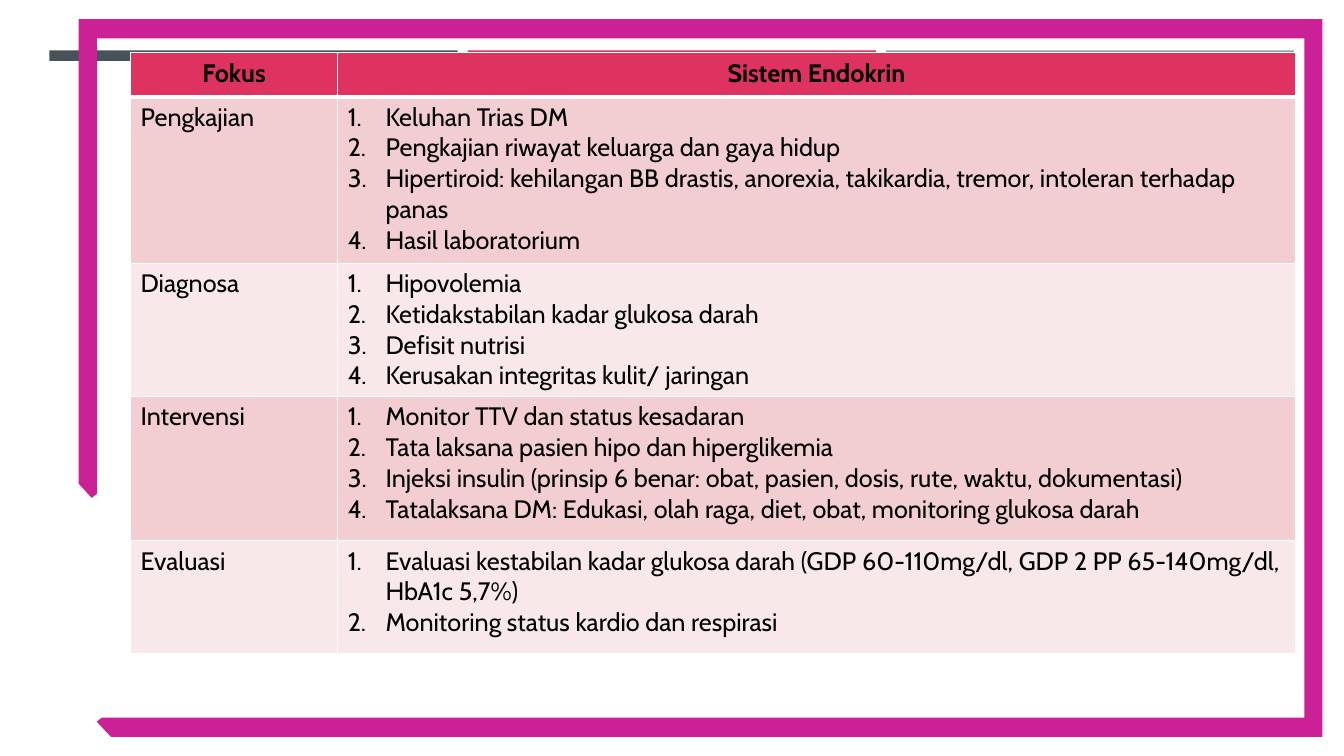
"""Build a slide with a table of nursing focus points for the endocrine system."""
from lxml import etree
from pptx import Presentation
from pptx.dml.color import RGBColor
from pptx.enum.shapes import MSO_SHAPE
from pptx.enum.text import PP_ALIGN
from pptx.oxml.ns import qn
from pptx.util import Pt

RECTANGLE = MSO_SHAPE.RECTANGLE
CENTER = PP_ALIGN.CENTER
INDENT = Pt(27)


def paint(fill, color):
    fill.solid()
    fill.fore_color.rgb = RGBColor.from_string(color)


def add_border(cell, side, width):
    line = etree.SubElement(cell._tc.get_or_add_tcPr(), qn(f"a:ln{side}"), w=str(Pt(width)))
    solid = etree.SubElement(line, qn("a:solidFill"))
    etree.SubElement(solid, qn("a:srgbClr"), val="FFFFFF")


presentation = Presentation()
presentation.slide_width = Pt(960)
presentation.slide_height = Pt(540)
slide = presentation.slides.add_slide(presentation.slide_layouts[6])

for index, color in enumerate(["465359", "DE3261", "969FA7"]):
    bar = slide.shapes.add_shape(RECTANGLE, Pt(35.3 + 298.8 * index), Pt(36), Pt(291.6), Pt(7.5))
    bar.shadow.inherit = False
    paint(bar.fill, color)
    bar.line.fill.background()

frame_points = [
    (56.2, 13.7), (944.6, 13.7), (944.6, 526.3), (79.2, 526.3), (69.1, 515.5), (72.7, 512.6),
    (931.7, 512.6), (931.7, 27.4), (69.1, 27.4), (69.1, 352.8), (65.5, 355.7), (56.2, 345.6),
]
builder = slide.shapes.build_freeform(*map(Pt, frame_points[0]), scale=1.0)
builder.add_line_segments([(Pt(x), Pt(y)) for x, y in frame_points[1:]], close=True)
frame = builder.convert_to_shape()
frame.shadow.inherit = False
paint(frame.fill, "CC2097")
frame.line.fill.background()

rows = [
    ("Fokus", ["Sistem Endokrin"]),
    ("Pengkajian", [
        "Keluhan Trias DM",
        "Pengkajian riwayat keluarga dan gaya hidup",
        "Hipertiroid: kehilangan BB drastis, anorexia, takikardia, tremor, intoleran terhadap panas",
        "Hasil laboratorium",
    ]),
    ("Diagnosa", [
        "Hipovolemia",
        "Ketidakstabilan kadar glukosa darah",
        "Defisit nutrisi",
        "Kerusakan integritas kulit/ jaringan",
    ]),
    ("Intervensi", [
        "Monitor TTV dan status kesadaran",
        "Tata laksana pasien hipo dan hiperglikemia",
        "Injeksi insulin (prinsip 6 benar: obat, pasien, dosis, rute, waktu, dokumentasi)",
        "Tatalaksana DM: Edukasi, olah raga, diet, obat, monitoring glukosa darah",
    ]),
    ("Evaluasi", [
        "Evaluasi kestabilan kadar glukosa darah (GDP 60-110mg/dl, GDP 2 PP 65-140mg/dl, HbA1c 5,7%)",
        "Monitoring status kardio dan respirasi",
    ]),
]
row_heights = [31.5, 119, 95, 103, 81]
column_widths = [148, 684]
table = slide.shapes.add_table(
    len(rows), 2, Pt(93.2), Pt(37.6), Pt(sum(column_widths)), Pt(sum(row_heights))
).table
for column, width in zip(table.columns, column_widths):
    column.width = Pt(width)

for row_index, (focus, items) in enumerate(rows):
    table.rows[row_index].height = Pt(row_heights[row_index])
    is_header = row_index == 0
    row_color = "DE3261" if is_header else ("F9E8EA", "F2CED2")[row_index % 2]
    for column_index, lines in enumerate([[focus], items]):
        cell = table.cell(row_index, column_index)
        for side in "LRTB":
            thick = (side == "B" and is_header) or (side == "T" and row_index == 1)
            add_border(cell, side, 3 if thick else 1)
        paint(cell.fill, row_color)
        cell.text = "\n".join(lines)
        for paragraph in cell.text_frame.paragraphs:
            if is_header:
                paragraph.alignment = CENTER
            elif column_index == 1:
                properties = paragraph._p.get_or_add_pPr()
                properties.set("marL", str(INDENT))
                properties.set("indent", str(-INDENT))
                etree.SubElement(properties, qn("a:buFont"), typeface="+mj-lt")
                etree.SubElement(properties, qn("a:buAutoNum"), type="arabicPeriod")
            paragraph.font.name = "Cabin"
            paragraph.font.size = Pt(18)
            paragraph.font.bold = is_header
            paragraph.font.color.rgb = RGBColor.from_string("000000")

presentation.save("out.pptx")
